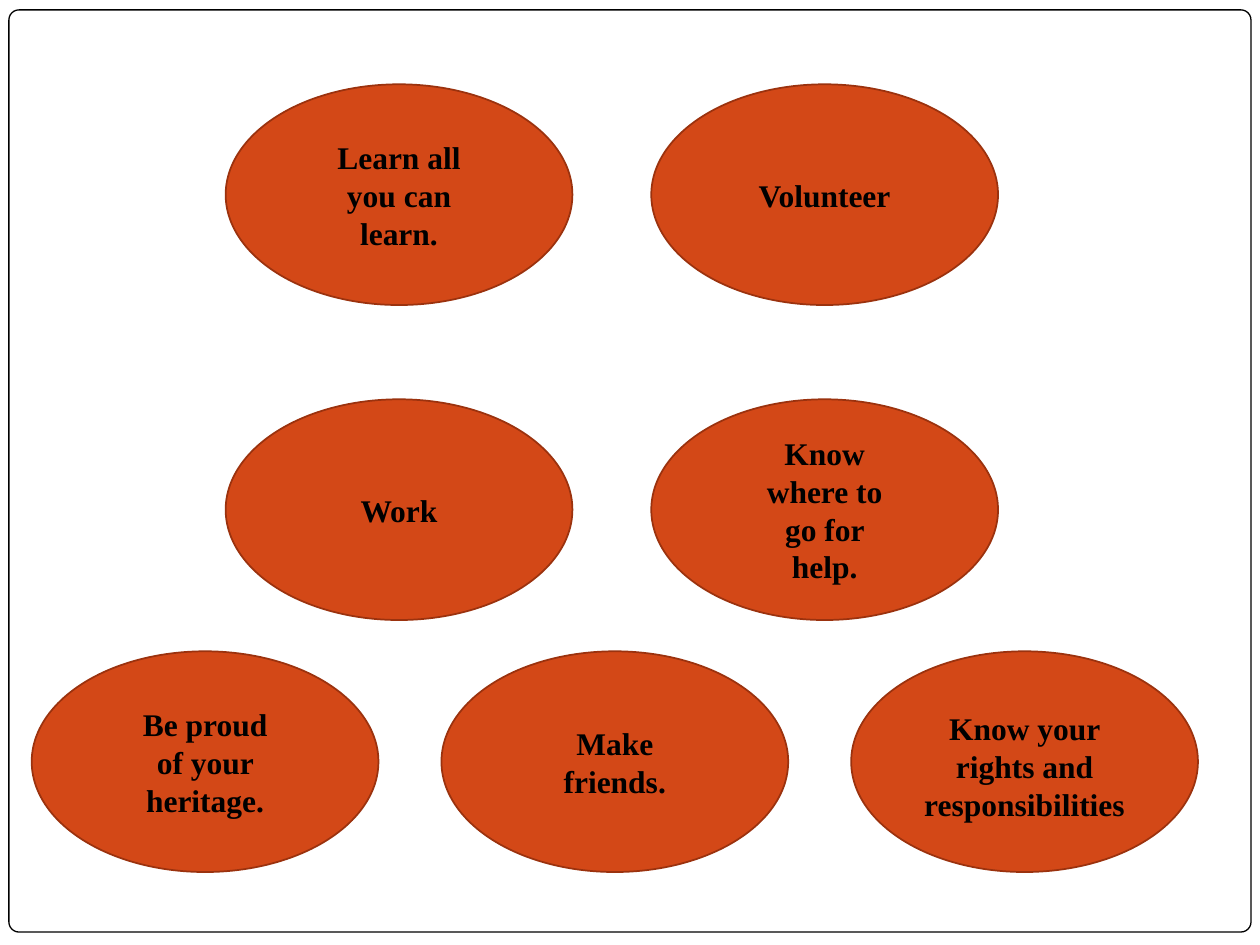
from pptx import Presentation
from pptx.dml.color import RGBColor
from pptx.enum.shapes import MSO_SHAPE
from pptx.enum.text import MSO_ANCHOR, PP_ALIGN
from pptx.util import Cm, Pt

OVAL_WIDTH, OVAL_HEIGHT = 6.99, 4.45
LABEL_WIDTH, WIDE_LABEL_WIDTH = 3.28, 5.23
LINE_HEIGHT, LABEL_PADDING = 0.77, 0.25

# Each row: left of first oval, top, step between ovals,
# then (text, line count, label width, label drop) for each oval.
ROWS = [
    (4.55, 1.7, 8.58, [("Learn all you can learn.", 3, LABEL_WIDTH, 0),
                       ("Volunteer", 1, LABEL_WIDTH, 0)]),
    (4.55, 8.05, 8.58, [("Work", 1, LABEL_WIDTH, 0),
                        ("Know where to go for help.", 4, LABEL_WIDTH, 0)]),
    (0.64, 13.13, 8.26, [("Be proud of your heritage.", 3, LABEL_WIDTH, 0),
                         ("Make friends.", 2, LABEL_WIDTH, 0),
                         ("Know your rights and responsibilities", 3,
                          WIDE_LABEL_WIDTH, 0.08)]),
]


def color(hex_string):
    return RGBColor.from_string(hex_string)


def add_outlined(page, kind, box, fill, line, weight):
    shape = page.shapes.add_shape(kind, *map(Cm, box))
    shape.shadow.inherit = False
    shape.fill.solid()
    shape.fill.fore_color.rgb = color(fill)
    shape.line.color.rgb = color(line)
    shape.line.width = Pt(weight)
    return shape


def add_frame(page, box):
    frame = add_outlined(page, MSO_SHAPE.ROUNDED_RECTANGLE, box,
                         "FFFFFF", "000000", 0.75)
    frame.adjustments[0] = 0.011


def add_label(page, box, text):
    text_frame = page.shapes.add_textbox(*map(Cm, box)).text_frame
    text_frame.word_wrap = True
    text_frame.vertical_anchor = MSO_ANCHOR.MIDDLE
    para = text_frame.paragraphs[0]
    para.text = text
    para.alignment = PP_ALIGN.CENTER
    para.font.name = "Times New Roman"
    para.font.size = Pt(18)
    para.font.bold = True
    para.font.color.rgb = color("000000")


def add_labelled_oval(page, box, text, lines, label_width, drop):
    left, top, width, height = box
    add_outlined(page, MSO_SHAPE.OVAL, box, "D34817", "9B320E", 1)
    label_height = LABEL_PADDING + lines * LINE_HEIGHT
    label_box = (left + (width - label_width) / 2,
                 top + (height - label_height) / 2 + drop,
                 label_width, label_height)
    add_label(page, label_box, text)


def main():
    deck = Presentation()
    deck.slide_width, deck.slide_height = Cm(25.4), Cm(19.05)
    page = deck.slides.add_slide(deck.slide_layouts[6])
    add_frame(page, (0.18, 0.2, 25.04, 18.59))
    for left, top, step, ovals in ROWS:
        for column, label in enumerate(ovals):
            box = (left + column * step, top, OVAL_WIDTH, OVAL_HEIGHT)
            add_labelled_oval(page, box, *label)
    deck.save("out.pptx")


if __name__ == "__main__":
    main()
